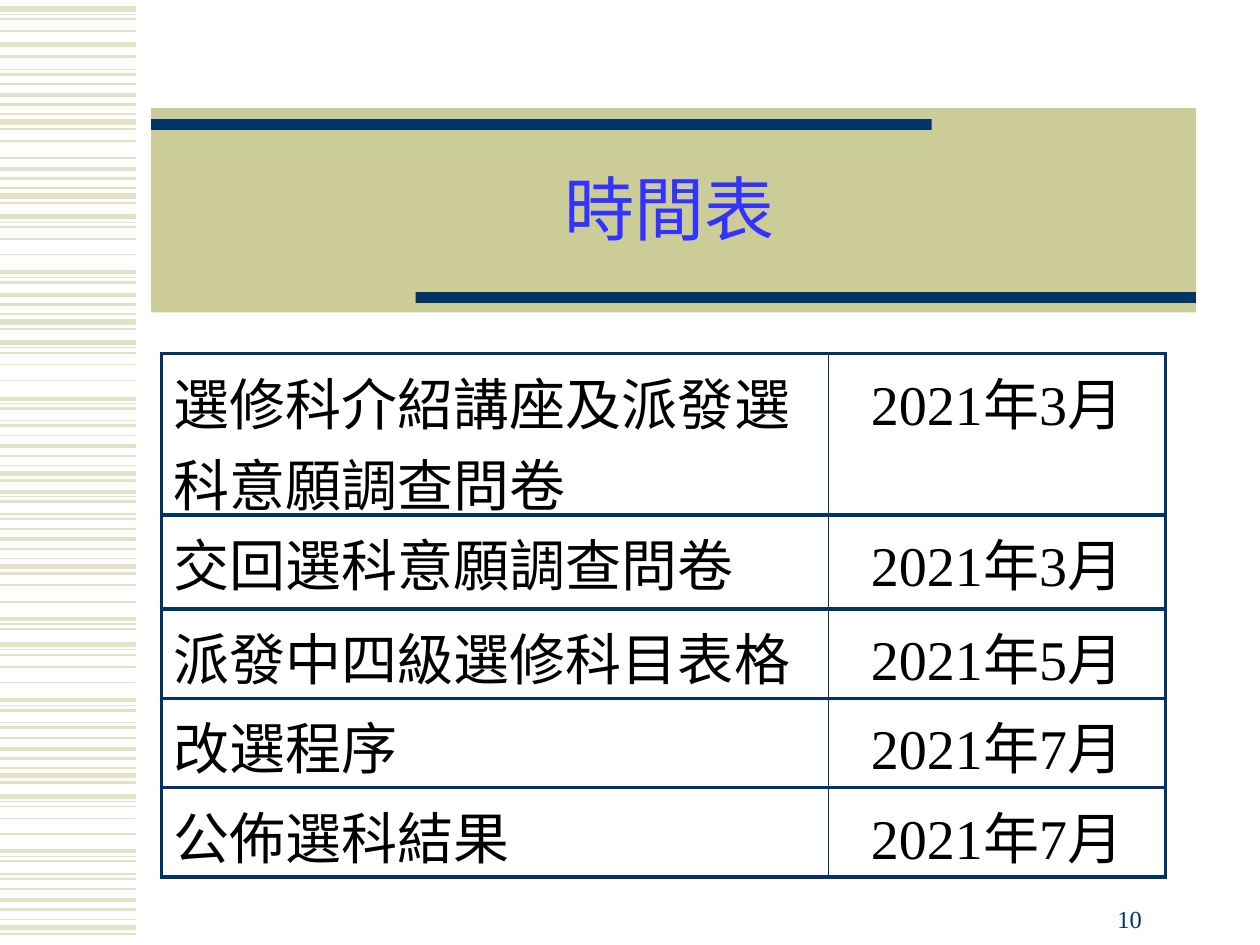
"""Build the timetable slide with a striped margin, a title band and a date table."""
from lxml import etree
from pptx import Presentation
from pptx import util as u
from pptx.dml.color import RGBColor
from pptx.enum import shapes, text
from pptx.oxml import ns

NAVY = RGBColor(0x00, 0x33, 0x66)
KHAKI = RGBColor(0xCC, 0xCC, 0x99)
STRIPE = RGBColor(0xE3, 0xE2, 0xC7)
BLUE = RGBColor(0x33, 0x33, 0xFF)
BLACK = RGBColor(0x00, 0x00, 0x00)

STRIPE_MOTIFS = [
    ([(0, 3), (0.11, 0.75), (0.21, 1), (0.45, 1)],
     [0.18, 4.37, 6.9, 12.99, 16.05]),
    ([(0, 2.25), (0.1, 0.75), (0.2, 1.5)],
     [5.49, 8.04, 9.91, 12.48, 14.12, 17.16]),
    ([(0, 0.75), (0.1, 1.5), (0.3, 1)],
     [1.4, 8.48, 10.36, 14.57, 17.62]),
    ([(0, 2.25), (0.2, 1.5), (0.39, 0.75), (0.55, 3), (0.69, 1.5)],
     [1.91, 3.4, 5.94, 8.99, 10.87, 15.09, 18.14]),
    ([(0, 1)], [2.84, 3.18, 5.13, 7.67, 11.8, 12.13, 13.76, 16.81]),
    ([(0, 3), (0.25, 1.5)], [0.89]),
]

SCHEDULE = [
    ("選修科介紹講座及派發選科意願調查問卷", "2021年3月"),
    ("交回選科意願調查問卷", "2021年3月"),
    ("派發中四級選修科目表格", "2021年5月"),
    ("改選程序", "2021年7月"),
    ("公佈選科結果", "2021年7月"),
]


class Deck:
    """Hold the style and the current slide, and add elements to it."""

    font = "Times New Roman"

    def __init__(self):
        self.prs = Presentation()
        self.prs.slide_width, self.prs.slide_height = u.Cm(25.4), u.Cm(19.05)
        self.s = self.prs.slides.add_slide(self.prs.slide_layouts[6])

    def fill_text(self, tf, content, size, color, align):
        tf.text = content
        p = tf.paragraphs[0]
        p.alignment = align
        f = p.runs[0].font
        f.name, f.size, f.color.rgb = self.font, u.Pt(size), color
        return p

    def bar(self, x, y, w, h, color):
        sp = self.s.shapes.add_shape(
            shapes.MSO_SHAPE.RECTANGLE, u.Cm(x), u.Cm(y), u.Cm(w), u.Cm(h))
        sp.shadow.inherit = False
        sp.fill.solid()
        sp.fill.fore_color.rgb = color
        sp.line.fill.background()

    def stripe(self, y, weight, length=2.75):
        ln = self.s.shapes.add_connector(
            shapes.MSO_CONNECTOR.STRAIGHT, 0, u.Cm(y), u.Cm(length), u.Cm(y))
        ln.line.color.rgb = STRIPE
        ln.line.width = u.Pt(weight)
        etree.SubElement(ln._element.spPr, ns.qn("a:effectLst"))

    def label(self, x, y, w, h, content, size, color, align, anchor):
        sp = self.s.shapes.add_textbox(u.Cm(x), u.Cm(y), u.Cm(w), u.Cm(h))
        tf = sp.text_frame
        tf.word_wrap = True
        tf.vertical_anchor = anchor
        return self.fill_text(tf, content, size, color, align)

    def borders(self, cell, widths):
        tc_pr = cell._tc.get_or_add_tcPr()
        for side, width in zip("LRTB", widths):
            ln = etree.SubElement(tc_pr, ns.qn(f"a:ln{side}"), w=str(u.Pt(width)))
            fill = etree.SubElement(ln, ns.qn("a:solidFill"))
            etree.SubElement(fill, ns.qn("a:srgbClr"), val=str(NAVY))

    def table(self, x, y, widths, heights, rows, size):
        tbl = self.s.shapes.add_table(
            len(rows), len(widths), u.Cm(x), u.Cm(y),
            u.Cm(sum(widths)), u.Cm(sum(heights))).table
        tbl.first_row = tbl.horz_banding = False
        for col, w in zip(tbl.columns, widths):
            col.width = u.Cm(w)
        aligns = text.PP_ALIGN.LEFT, text.PP_ALIGN.CENTER
        sides = (2.25, 1), (1, 2.25)
        for row, h, values in zip(tbl.rows, heights, rows):
            row.height = u.Cm(h)
            for cell, value, align, side in zip(row.cells, values, aligns, sides):
                self.borders(cell, (*side, 2.25, 2.25))
                cell.fill.background()
                self.fill_text(cell.text_frame, value, size, BLACK, align)


def main():
    d = Deck()
    d.bar(3.05, 2.18, 21.06, 4.12, KHAKI)
    for motif, starts in STRIPE_MOTIFS:
        for start in starts:
            for offset, weight in motif:
                d.stripe(start + offset, weight)
    d.bar(8.38, 5.89, 15.73, 0.22, NAVY)
    d.bar(3.05, 2.4, 15.73, 0.22, NAVY)
    p = d.label(3.25, 2.9, 20.5, 2.82, "時間表", 40, BLUE,
                text.PP_ALIGN.CENTER, text.MSO_ANCHOR.MIDDLE)
    p.line_spacing = 0.85
    d.label(17.96, 17.68, 5.31, 1.27, "10", 14, NAVY,
            text.PP_ALIGN.RIGHT, text.MSO_ANCHOR.BOTTOM)
    d.table(3.25, 7.13, [13.45, 6.8], [3.25, 1.9] + [1.8] * 3, SCHEDULE, 32)
    d.prs.save("out.pptx")


if __name__ == "__main__":
    main()
